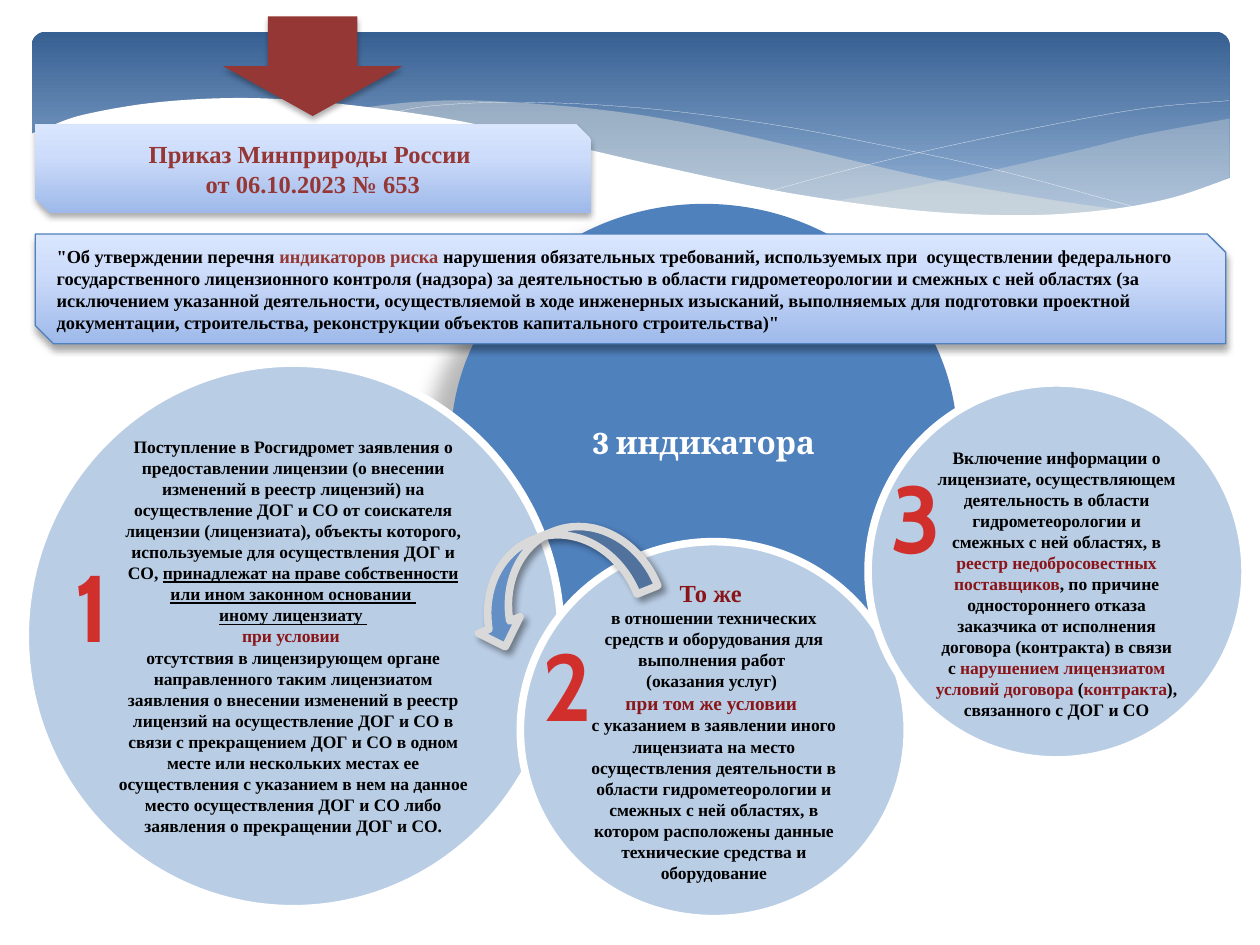
import pptx
import pptx.util
import pptx.dml.color
import pptx.enum.shapes
import pptx.enum.text
import pptx.oxml
import pptx.oxml.ns

Cm, Pt = pptx.util.Cm, pptx.util.Pt
RGBColor = pptx.dml.color.RGBColor
MSO = pptx.enum.shapes.MSO_SHAPE
PP_ALIGN = pptx.enum.text.PP_ALIGN
MSO_ANCHOR = pptx.enum.text.MSO_ANCHOR
qn = pptx.oxml.ns.qn
NS = pptx.oxml.ns.nsdecls("a")

WHITE = RGBColor(0xFF, 0xFF, 0xFF)
BLACK = RGBColor(0, 0, 0)
BLUE = RGBColor(0x4F, 0x81, 0xBD)
PALE = RGBColor(0xB9, 0xCD, 0xE5)
ARROW = RGBColor(0x64, 0x8F, 0xC4)
GREY = RGBColor(0xD9, 0xD9, 0xD9)
CREAM = RGBColor(0xEE, 0xEC, 0xE1)
BRICK = RGBColor(0x95, 0x37, 0x35)
DARK_RED = RGBColor(0x89, 0x15, 0x18)
RED = RGBColor(0xD0, 0x2F, 0x2C)
NAVY = RGBColor(0x37, 0x60, 0x92)
SKY = RGBColor(0x95, 0xB3, 0xD7)
BANNER = [(0, RGBColor(0x9E, 0xB9, 0xEA)), (65, RGBColor(0xCD, 0xDC, 0xFA)),
          (100, RGBColor(0xD9, 0xE6, 0xFE))]


def write(s, paragraphs, size=10, color=BLACK, font="Times New Roman", align=PP_ALIGN.CENTER,
          anchor=MSO_ANCHOR.MIDDLE, wrap=True):
    tf = s.text_frame
    tf.word_wrap = wrap
    tf.vertical_anchor = anchor
    for i, runs in enumerate(paragraphs):
        p = tf.paragraphs[0] if i == 0 else tf.add_paragraph()
        p.alignment = align
        for text, fmt in runs:
            r = p.add_run()
            r.text = text
            r.font.name = font
            r.font.bold = True
            r.font.size = Pt(fmt.get("size", size))
            r.font.color.rgb = fmt.get("color", color)
            if fmt.get("underline"):
                r.font.underline = True


def style(s, fill=None, line=None, width=0.75, shadow=None, angle=0, alpha=100):
    s.shadow.inherit = False
    if isinstance(fill, list):
        s.fill.gradient()
        grad = s._element.spPr.find(qn("a:gradFill"))
        stops = grad.find(qn("a:gsLst"))
        for gs in list(stops):
            stops.remove(gs)
        for pos, c in fill:
            stops.append(pptx.oxml.parse_xml(
                f'<a:gs {NS} pos="{pos * 1000}"><a:srgbClr val="{c}"/></a:gs>'))
        grad.find(qn("a:lin")).set("ang", str(angle * 60000))
    elif fill is None:
        s.fill.background()
    else:
        s.fill.solid()
        s.fill.fore_color.rgb = fill
        if alpha < 100:
            clr = s._element.spPr.find(qn("a:solidFill"))[0]
            clr.append(pptx.oxml.parse_xml(f'<a:alpha {NS} val="{alpha * 1000}"/>'))
    if line is None:
        s.line.fill.background()
    else:
        s.line.color.rgb = line
        s.line.width = Pt(width)
    if shadow:
        opacity, blur, dist, turn = shadow
        s._element.spPr.find(qn("a:effectLst")).append(pptx.oxml.parse_xml(
            f'<a:outerShdw {NS} blurRad="{Pt(blur)}" dist="{Pt(dist)}" dir="{turn * 60000}" '
            f'algn="ctr" rotWithShape="0"><a:srgbClr val="000000">'
            f'<a:alpha val="{opacity * 1000}"/></a:srgbClr></a:outerShdw>'))


prs = pptx.Presentation()
prs.slide_width, prs.slide_height = Cm(25.4), Cm(19.05)
shapes = prs.slides.add_slide(prs.slide_layouts[6]).shapes

s = shapes.add_shape(MSO.ROUNDED_RECTANGLE, Cm(0.64), Cm(0.64), Cm(24.15), Cm(3.97))
s.adjustments[0] = 0.07
style(s, [(0, NAVY), (90, SKY)], angle=90)

waves = [
    ([[(24.79, 2.39), (23.01, 2.72), (21.87, 3), (19.79, 3.48), (17.93, 3.86), (16.79, 4.06)],
      [(16.79, 4.06), (18.26, 4.24), (19.84, 4.37), (21.21, 4.37), (22.78, 4.19), (23.93, 3.91),
       (24.79, 3.58)]], dict(fill=CREAM, alpha=29)),
    ([[(22.68, 4.24), (21.26, 4.04), (18.82, 3.61), (15.98, 2.95), (13.74, 2.46), (11.81, 2.18),
       (9.65, 2.03), (8.33, 2.06), (7.26, 2.18)],
      [(7.26, 2.18), (9.19, 2.46), (11.4, 2.95), (14.38, 3.63), (16.51, 4.01), (18.34, 4.27),
       (20.22, 4.39), (21.54, 4.37), (22.68, 4.24)]], dict(fill=CREAM, alpha=40)),
    ([[(7.85, 2.29), (8.74, 2.13), (10.57, 2.06), (12.95, 2.18), (15.44, 2.49), (17.65, 2.9),
       (20.19, 3.45), (23.04, 4.22)]], dict(line=WHITE, width=0.1)),
    ([[(15.57, 3.84), (17.07, 3.43), (19, 2.97), (21.23, 2.51), (23.11, 2.18),
       (24.77, 2.03)]], dict(line=WHITE, width=0.1)),
    ([[(24.82, 3.58), (23.62, 3.99), (22.23, 4.24), (20.55, 4.34), (18.44, 4.24), (15.9, 3.89),
       (13.44, 3.38), (11.35, 2.9), (9.27, 2.44), (7.42, 2.16), (5.84, 2.01), (4.5, 1.98),
       (3.02, 2.08), (1.7, 2.31), (1.02, 2.54), (0.58, 2.72)],
      [(0.58, 5.69), (24.82, 5.69)]], dict(fill=WHITE)),
]
STEPS = 6
for curves, look in waves:
    points = []
    for curve in curves:
        ext = [curve[0]] + curve + [curve[-1]]
        for a, b, c, d in zip(ext, ext[1:], ext[2:], ext[3:]):
            for t in [k / STEPS for k in range(STEPS)]:
                points.append([Cm(0.5 * (2 * v + (w - u) * t + (2 * u - 5 * v + 4 * w - x) * t ** 2
                                         + (3 * v - u - 3 * w + x) * t ** 3))
                               for u, v, w, x in zip(a, b, c, d)])
        points.append([Cm(v) for v in curve[-1]])
    fb = shapes.build_freeform(*points[0])
    fb.add_line_segments(points[1:], close="fill" in look)
    style(fb.convert_to_shape(), **look)

s = shapes.add_shape(MSO.OVAL, Cm(9.09), Cm(4.11), Cm(10.21), Cm(9.6))
style(s, BLUE, shadow=(28, 11.8, 19.7, 141))
write(s, [[("3 индикатора", {})]], size=18, color=WHITE, font="Cambria")

s = shapes.add_shape(MSO.DOWN_ARROW, Cm(4.5), Cm(0.33), Cm(3.61), Cm(2.01))
style(s, BRICK, shadow=(32, 3.5, 2.2, 90))

s = shapes.add_shape(MSO.SNIP_2_DIAG_RECTANGLE, Cm(0.71), Cm(2.51), Cm(11.2), Cm(1.78))
style(s, BANNER, angle=270, shadow=(32, 3.5, 2.2, 90))
write(s, [[("Приказ Минприроды России ", {})], [("от 06.10.2023 № 653", {})]], size=14, color=BRICK)

s = shapes.add_shape(MSO.SNIP_2_DIAG_RECTANGLE, Cm(0.71), Cm(4.72), Cm(24), Cm(2.21))
style(s, BANNER, line=BLUE, angle=270, shadow=(35, 4, 3, 90))
write(s, [[
    ('"Об утверждении перечня ', {}), ("индикаторов риска ", {"color": BRICK}),
    ("нарушения обязательных требований, используемых при  осуществлении федерального "
     "государственного лицензионного контроля (надзора) за деятельностью в области "
     "гидрометеорологии и смежных с ней областях (за исключением указанной деятельности, "
     "осуществляемой в ходе инженерных изысканий, выполняемых для подготовки проектной "
     "документации, строительства, реконструкции объектов капитального строительства)\"", {}),
]], size=10.5, align=PP_ALIGN.LEFT)

accent = {"color": DARK_RED}
under = {"underline": True}
circles = [
    ((0.51, 7.32, 10.8, 11), 0.13, [
        [("Поступление в Росгидромет заявления о предоставлении лицензии (о внесении изменений "
          "в реестр лицензий) на осуществление ДОГ и СО от соискателя лицензии (лицензиата), "
          "объекты которого, используемые для осуществления ДОГ и СО, ", {}),
         ("принадлежат на праве собственности или ином законном основании ", under)],
        [("иному лицензиату ", under)],
        [("при условии ", accent)],
        [("отсутствия в лицензирующем органе направленного таким лицензиатом заявления о "
          "внесении изменений в реестр лицензий на осуществление ДОГ и СО в связи с "
          "прекращением ДОГ и СО в одном месте или нескольких местах ее осуществления с "
          "указанием в нем на данное место осуществления ДОГ и СО либо заявления о "
          "прекращении ДОГ и СО.", {})]]),
    ((10.49, 10.92, 7.8, 7.6), 0.13, [
        [("То же ", {"size": 14, "color": DARK_RED})],
        [("в отношении технических средств и оборудования для выполнения работ ", {})],
        [("(оказания услуг) ", {})],
        [("при том же условии ", {"size": 11, "color": DARK_RED})],
        [("с указанием в заявлении иного лицензиата на место осуществления деятельности в "
          "области гидрометеорологии и смежных с ней областях, в котором расположены данные "
          "технические средства и оборудование", {})]]),
    ((17.5, 7.72, 7.6, 7.6), 0.61, [
        [("Включение информации о лицензиате, осуществляющем деятельность в области "
          "гидрометеорологии и смежных с ней областях, в ", {}),
         ("реестр недобросовестных поставщиков", accent),
         (", по причине одностороннего отказа заказчика от исполнения договора (контракта) "
          "в связи с ", {}),
         ("нарушением лицензиатом условий договора ", accent), ("(", {}),
         ("контракта", accent), ("), связанного с ДОГ и СО", {})]]),
]
for box, top, paragraphs in circles:
    s = shapes.add_shape(MSO.OVAL, *[Cm(v) for v in box])
    style(s, PALE, line=WHITE, width=4.33)
    s.text_frame.margin_top = Cm(top)
    write(s, paragraphs)

for digit, x, y, w, wrap in [("1", 0.51, 10.92, 2.67, True), ("2", 10.69, 12.52, 1.42, False),
                             ("3", 17.7, 9.12, 1.42, True)]:
    s = shapes.add_textbox(Cm(x), Cm(y), Cm(w), Cm(2.57))
    write(s, [[(digit, {})]], size=54, color=RED, font="Cabin", anchor=MSO_ANCHOR.TOP, wrap=wrap)

s = shapes.add_shape(MSO.CURVED_UP_ARROW, Cm(9.3), Cm(10.77), Cm(3.76), Cm(1.8))
s.rotation = 158.2
style(s, ARROW, line=GREY, width=4.33, shadow=(40, 4, 3, 45))

prs.save("out.pptx")
